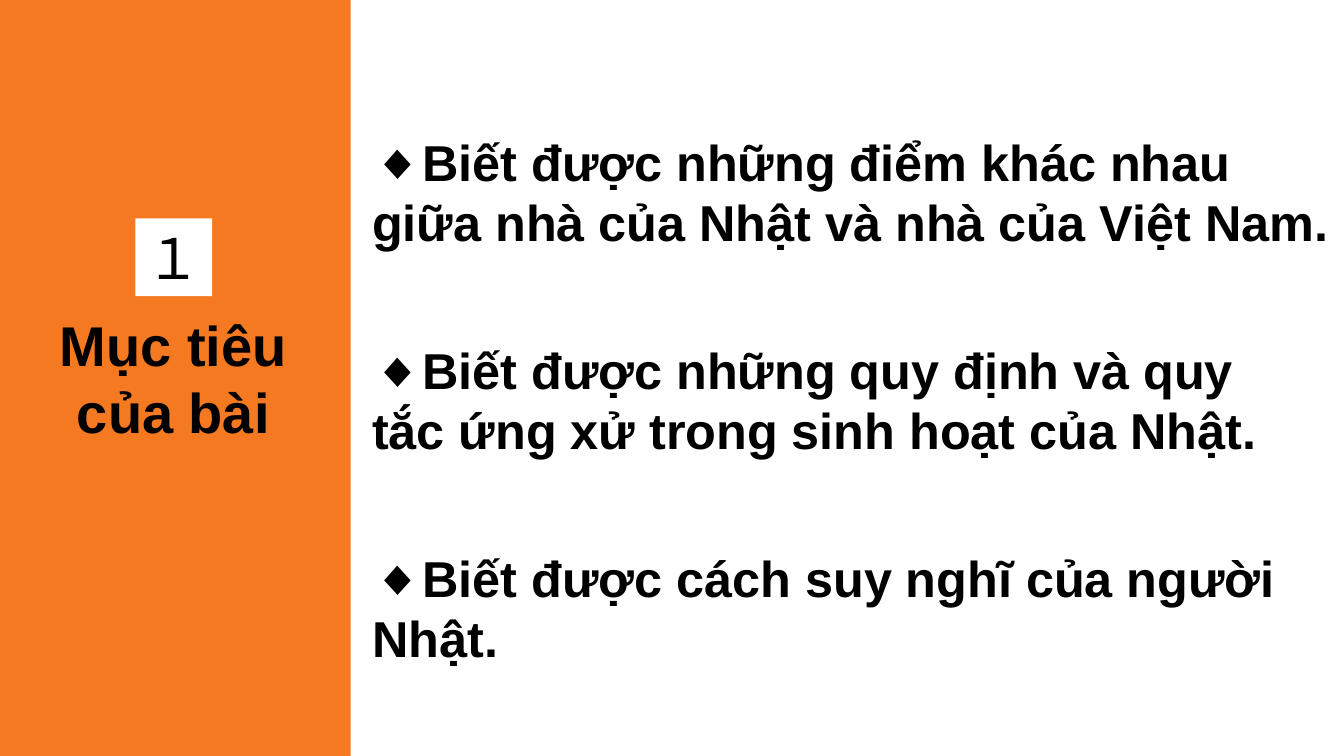
from pptx import Presentation, util as u
from pptx.dml import color
from pptx.enum import shapes, text


def rgb(value):
    return color.RGBColor.from_string(value)


class Page:
    scale = 9525
    font = "Arial"
    ink = "000000"

    def __init__(self, deck):
        self.shapes = deck.slides.add_slide(deck.slide_layouts[6]).shapes

    def px(self, *lengths):
        return [u.Emu(length * self.scale) for length in lengths]

    def set_words(self, shape, words, size, bold):
        frame = shape.text_frame
        frame.word_wrap = True
        frame.text = words
        para = frame.paragraphs[0]
        for span in para.runs:
            span.font.name = self.font
            span.font.size = u.Pt(size)
            span.font.bold = bold
            span.font.color.rgb = rgb(self.ink)
        return frame, para

    def text_box(self, bounds, words, size):
        box = self.shapes.add_textbox(*self.px(*bounds))
        frame, para = self.set_words(box, words, size, True)
        frame.auto_size = text.MSO_AUTO_SIZE.SHAPE_TO_FIT_TEXT

    def panel(self, bounds, fill, words, size, bold=False):
        box = self.shapes.add_shape(shapes.MSO_SHAPE.RECTANGLE, *self.px(*bounds))
        box.shadow.inherit = False
        box.fill.solid()
        box.fill.fore_color.rgb = rgb(fill)
        box.line.fill.background()
        frame, para = self.set_words(box, words, size, bold)
        frame.vertical_anchor = text.MSO_ANCHOR.MIDDLE
        para.alignment = text.PP_ALIGN.CENTER


def main():
    deck = Presentation()
    deck.slide_width, deck.slide_height = u.Emu(1280 * Page.scale), u.Emu(720 * Page.scale)
    page = Page(deck)

    page.panel((-4, 0, 338, 720), "F47921", "Mục tiêu của bài", 40, bold=True)
    page.panel((129, 208, 73, 74), "FFFFFF", "１", 40)

    goals = [
        ("◆Biết được những điểm khác nhau giữa nhà của Nhật và nhà của Việt Nam.", 935),
        ("◆Biết được những quy định và quy tắc ứng xử trong sinh hoạt của Nhật.", 899),
        ("◆Biết được cách suy nghĩ của người Nhật.", 935),
    ]
    for row, (goal, width) in enumerate(goals):
        page.text_box((345, 120 + 198 * row, width, 126), goal, 36)

    deck.save("out.pptx")


if __name__ == "__main__":
    main()
